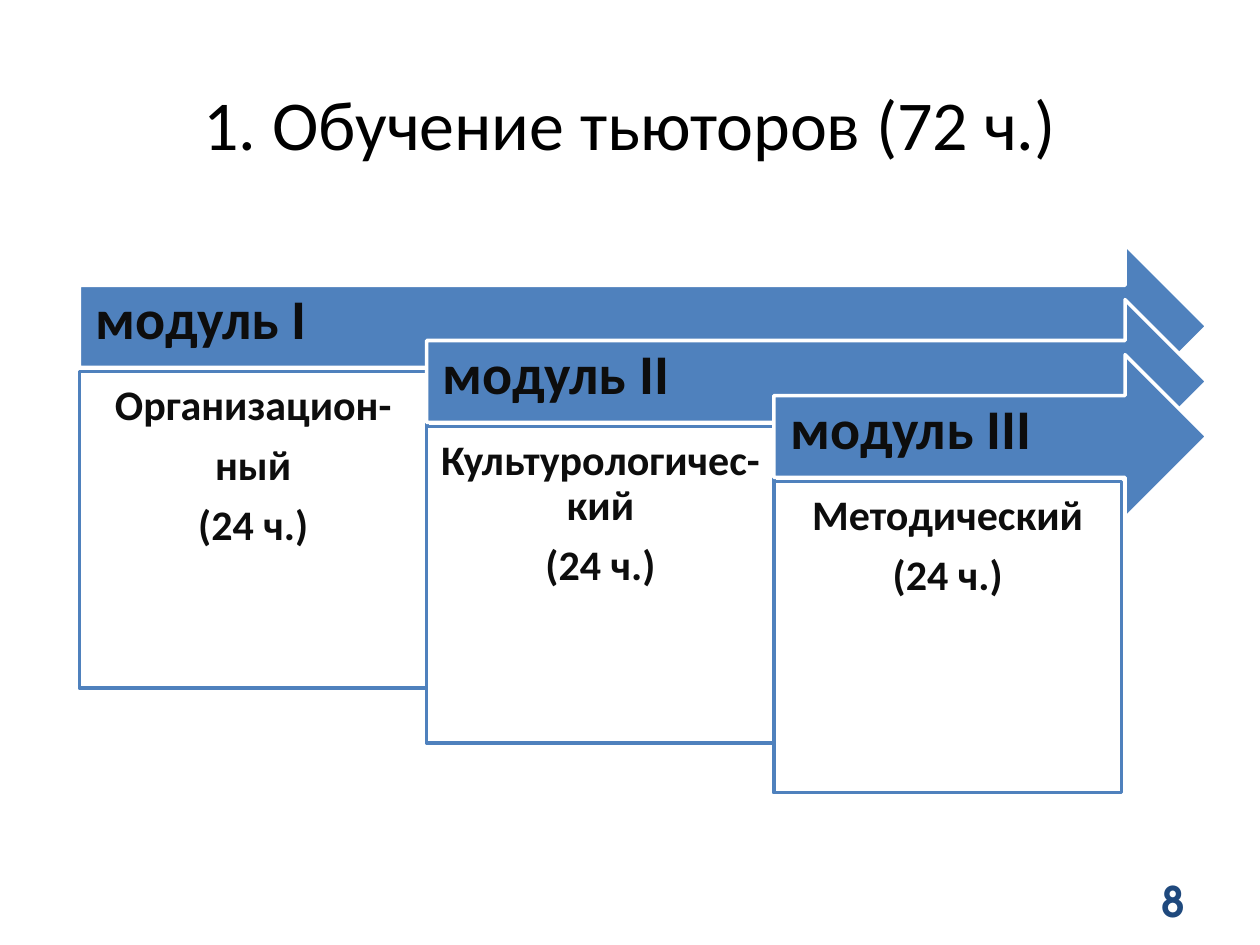
import pptx
import pptx.dml.color
import pptx.enum.shapes
import pptx.enum.text
import pptx.util

Cm = pptx.util.Cm
Pt = pptx.util.Pt
SHAPE = pptx.enum.shapes.MSO_SHAPE
ALIGN = pptx.enum.text.PP_ALIGN
ANCHOR = pptx.enum.text.MSO_ANCHOR

BLUE, WHITE, BLACK, INK, NAVY = "4F81BD", "FFFFFF", "000000", "0D0D0D", "1F497D"

MODULES = [
    ("модуль I", ["Организацион-", "ный", "(24 ч.)"], 6.38),
    ("модуль II", ["Культурологичес-кий", "(24 ч.)"], 6.38),
    ("модуль III", ["Методический", "(24 ч.)"], 6.27),
]
FIRST_LEFT, FIRST_TOP = 1.6, 4.93
STEP_RIGHT, STEP_DOWN = 7, 1.11
ARROW_TIP, ARROW_HEIGHT = 24.33, 3.3
CARD_DROP, CARD_WIDTH = 2.56, 7.01

TITLE_FONT = {"name": "Calibri", "size": Pt(40), "bold": False}
LABEL_FONT = {"name": "Calibri", "size": Pt(32), "bold": True}
CARD_FONT = {"name": "Calibri", "size": Pt(24), "bold": True}
NUMBER_FONT = {"name": "TeX Gyre Adventor", "size": Pt(24), "bold": True}


def color(hex_value):
    return pptx.dml.color.RGBColor.from_string(hex_value)


def apply(target, values):
    for name, value in values.items():
        setattr(target, name, value)


def frame_format(anchor, left, top, right, bottom):
    """Text frame settings, with the insets in centimetres."""
    return {
        "word_wrap": True,
        "auto_size": pptx.enum.text.MSO_AUTO_SIZE.NONE,
        "vertical_anchor": anchor,
        "margin_left": Cm(left),
        "margin_top": Cm(top),
        "margin_right": Cm(right),
        "margin_bottom": Cm(bottom),
    }


def module_paragraph(alignment, font):
    return {
        "alignment": alignment,
        "line_spacing": 0.9,
        "space_after": Pt(round(font["size"].pt * 0.35, 1)),
    }


def write(shape, lines, frame_values, para_values, font_values, hex_value):
    frame = shape.text_frame
    apply(frame, frame_values)
    for index, line in enumerate(lines):
        para = frame.add_paragraph() if index else frame.paragraphs[0]
        apply(para, para_values)
        span = para.add_run()
        span.text = line
        apply(span.font, font_values)
        span.font.color.rgb = color(hex_value)


def add_panel(page, kind, bounds, fill, line):
    panel = page.shapes.add_shape(kind, *map(Cm, bounds))
    panel.shadow.inherit = False
    panel.fill.solid()
    panel.fill.fore_color.rgb = color(fill)
    panel.line.color.rgb = color(line)
    panel.line.width = Pt(2)
    return panel


def add_module(page, index, label, lines, card_height):
    left = FIRST_LEFT + index * STEP_RIGHT
    top = FIRST_TOP + index * STEP_DOWN
    arrow = add_panel(page, SHAPE.RIGHT_ARROW,
                      (left, top, ARROW_TIP - left, ARROW_HEIGHT), BLUE, WHITE)
    write(arrow, [label], frame_format(ANCHOR.MIDDLE, 0.33, 0.33, 0.71, 0.53),
          module_paragraph(ALIGN.LEFT, LABEL_FONT), LABEL_FONT, INK)
    card = add_panel(page, SHAPE.RECTANGLE,
                     (left, top + CARD_DROP, CARD_WIDTH, card_height), WHITE, BLUE)
    write(card, lines, frame_format(ANCHOR.TOP, 0.25, 0.25, 0.25, 0.25),
          module_paragraph(ALIGN.CENTER, CARD_FONT), CARD_FONT, INK)


def add_title(page, text):
    title = page.shapes.title
    apply(title, {"left": Cm(1.9), "top": Cm(0.43),
                  "width": Cm(21.59), "height": Cm(4.09)})
    write(title, [text], frame_format(ANCHOR.MIDDLE, 0.25, 0.13, 0.25, 0.13),
          {"alignment": ALIGN.CENTER}, TITLE_FONT, BLACK)


def add_page_number(page, number):
    box = page.shapes.add_textbox(Cm(18.21), Cm(17.65), Cm(5.92), Cm(1.02))
    write(box, [number], frame_format(ANCHOR.MIDDLE, 0.25, 0.13, 0.25, 0.13),
          {"alignment": ALIGN.RIGHT}, NUMBER_FONT, NAVY)


def main():
    deck = pptx.Presentation()
    apply(deck, {"slide_width": Cm(25.4), "slide_height": Cm(19.05)})
    page = deck.slides.add_slide(deck.slide_layouts.get_by_name("Title Only"))
    add_page_number(page, "8")
    add_title(page, "1. Обучение тьюторов (72 ч.)")
    for index, module in enumerate(MODULES):
        add_module(page, index, *module)
    deck.save("out.pptx")


if __name__ == "__main__":
    main()
